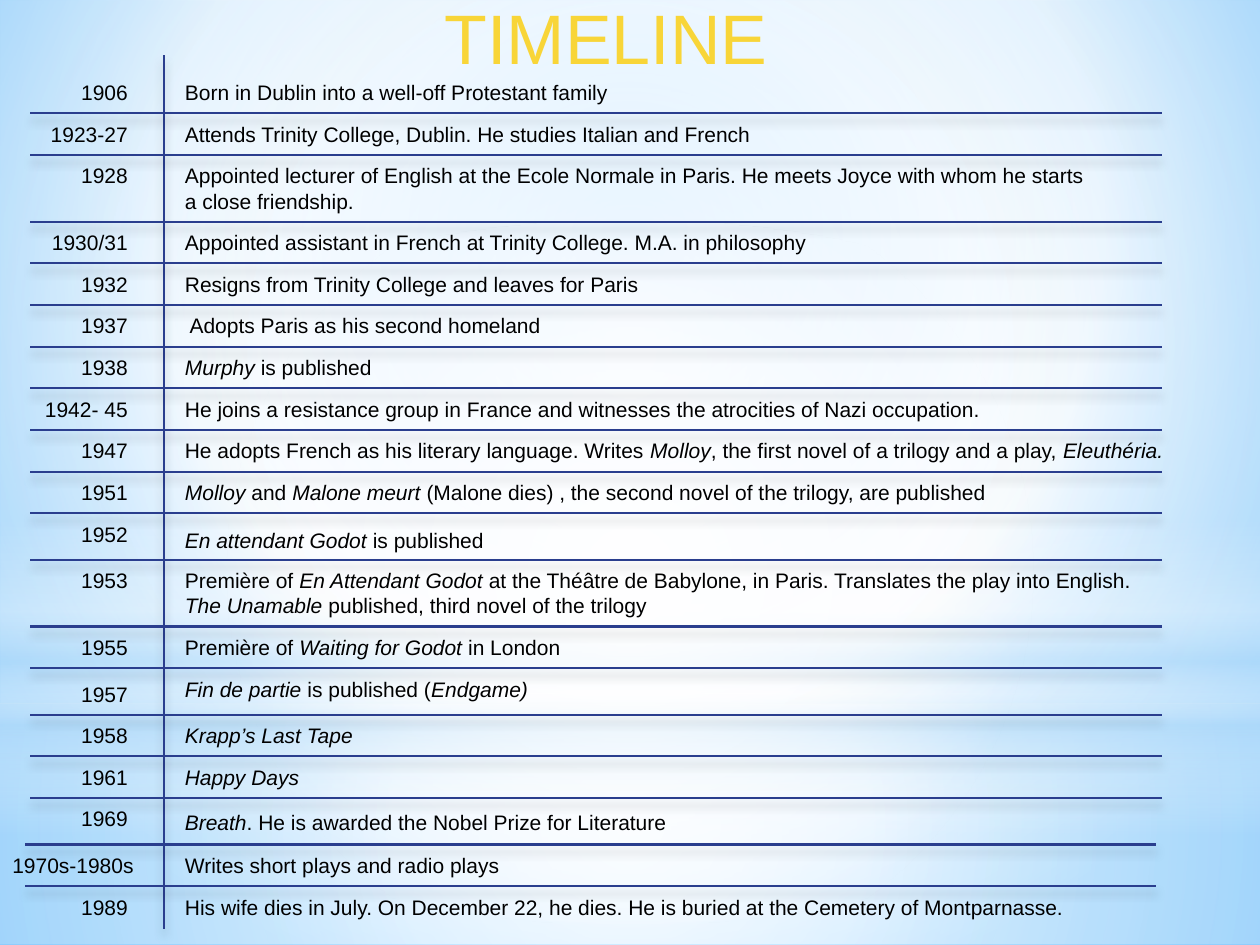
"""Build a one-slide timeline of a writer's life on a soft blue background."""
from lxml import etree
from pptx import Presentation
from pptx import util as u
from pptx.dml.color import RGBColor
from pptx.enum import shapes, text
from pptx.oxml import parse_xml
from pptx.oxml.ns import nsdecls, qn

Pt = u.Pt
COLORS = {"title": "F8D538", "text": "000000", "rule": "2A3E8E", "white": "FFFFFF",
          "pale": "B4DCFA", "sky": "9ED5FF", "deep": "5BB9FF"}
CENTRE = (50, 50, 50, 50)


def set_gradient(holder, stops, focus=None):
    """Replace the solid fill with a gradient, radial when a focus is given."""
    stop_xml = "".join(
        f'<a:gs pos="{position * 1000}"><a:srgbClr val="{COLORS[color]}">'
        f'<a:alpha val="{opacity * 1000}"/></a:srgbClr></a:gs>'
        for position, color, opacity in stops)
    shade = '<a:lin ang="5400000" scaled="0"/>'
    if focus:
        left, top, right, bottom = (side * 1000 for side in focus)
        shade = (f'<a:path path="circle"><a:fillToRect l="{left}" t="{top}" '
                 f'r="{right}" b="{bottom}"/></a:path>')
    solid = holder.find(".//" + qn("a:solidFill"))
    solid.getparent().replace(solid, parse_xml(
        f'<a:gradFill {nsdecls("a")} rotWithShape="1"><a:gsLst>{stop_xml}</a:gsLst>'
        f'{shade}</a:gradFill>'))


def add_rule(group, x1, y1, x2, y2):
    """Draw a thin line with a soft shadow below it."""
    line = group.shapes.add_connector(
        shapes.MSO_CONNECTOR.STRAIGHT, Pt(x1), Pt(y1), Pt(x2), Pt(y2))
    line.line.color.rgb = RGBColor.from_string(COLORS["rule"])
    line.line.width = Pt(1.25)
    effects = etree.SubElement(line.element.spPr, qn("a:effectLst"))
    shadow = etree.SubElement(effects, qn("a:outerShdw"), blurRad=str(Pt(5)),
                              dist=str(Pt(4)), dir="5400000", rotWithShape="0")
    color = etree.SubElement(shadow, qn("a:srgbClr"), val=COLORS["text"])
    etree.SubElement(color, qn("a:alpha"), val="20000")


presentation = Presentation()
presentation.slide_width, presentation.slide_height = Pt(720), Pt(540)
slide = presentation.slides.add_slide(presentation.slide_layouts[5])
slide.background.fill.solid()
set_gradient(slide.element, [(0, "sky", 100), (60, "white", 100), (100, "deep", 100)],
             (20, 10, 20, 60))

title = slide.shapes.title
title.left, title.top, title.width, title.height = Pt(9), Pt(-10.8), Pt(671), Pt(42.5)
frame = title.text_frame
frame.text = "TIMELINE"
frame.auto_size = text.MSO_AUTO_SIZE.NONE
frame.vertical_anchor = text.MSO_ANCHOR.TOP
frame.margin_left, frame.margin_top = Pt(3.6), Pt(7.8)
frame.margin_right = frame.margin_bottom = 0
paragraph = frame.paragraphs[0]
paragraph.alignment = text.PP_ALIGN.CENTER
paragraph.font.size, paragraph.font.name = Pt(40), "Arial"
paragraph.font.color.rgb = RGBColor.from_string(COLORS["title"])

RECTANGLE, OVAL = shapes.MSO_SHAPE.RECTANGLE, shapes.MSO_SHAPE.OVAL
panels = [
    (RECTANGLE, 402, 138, [(0, "white", 91), (37, "white", 76), (100, "pale", 79)], CENTRE),
    (RECTANGLE, 0, 402, [(0, "white", 89), (48, "white", 62), (100, "pale", 79)], CENTRE),
    (RECTANGLE, 297, 180, [(0, "white", 0), (29, "white", 30), (45, "pale", 40),
                           (55, "white", 26), (65, "pale", 60), (100, "white", 0)], None),
    (OVAL, 126, 402, [(0, "white", 100), (56, "white", 0)], CENTRE),
]
for kind, top, height, stops, focus in panels:
    panel = slide.shapes.add_shape(kind, 0, Pt(top), Pt(720), Pt(height))
    panel.shadow.inherit = False
    panel.line.fill.background()
    panel.fill.solid()
    set_gradient(panel.element.spPr, stops, focus)
    title.element.addprevious(panel.element)

SINGLE, LOOSE, DOUBLE = 23.8, 26.6, 38.1
# Each event: year, text with *italics*, text width, row height, year and text drop
events = [
    ("1906", "Born in Dublin into a well-off Protestant family", 414, SINGLE, 0, 0),
    ("1923-27", "Attends Trinity College, Dublin. He studies Italian and French",
     393, SINGLE, 0, 0),
    ("1928", "Appointed lecturer of English at the Ecole Normale in Paris. "
     "He meets Joyce with whom he starts\va close friendship.", 595, DOUBLE, 0, 0),
    ("1930/31", "Appointed assistant in French at Trinity College. M.A. in philosophy",
     566, SINGLE, 0, 0),
    ("1932", "Resigns from Trinity College and leaves for Paris", 381, SINGLE, 0, 0),
    ("1937", " Adopts Paris as his second homeland", 223, SINGLE, 0, 0),
    ("1938", "*Murphy* is published", 123, SINGLE, 0, 0),
    ("1942- 45", "He joins a resistance group in France and witnesses the atrocities "
     "of Nazi occupation.", 566, SINGLE, 0, 0),
    ("1947", "He adopts French as his literary language. Writes *Molloy*, the first novel "
     "of a trilogy and a play, *Eleuthéria.*", 595, SINGLE, 0, 0),
    ("1951", "*Molloy* and *Malone meurt* (Malone dies) , the second novel of the trilogy, "
     "are published", 566, SINGLE, 0, 0),
    ("1952", "*En attendant Godot* is published", 224, LOOSE, 0, 3.6),
    ("1953", "Première of *En Attendant Godot* at the Théâtre de Babylone, in Paris. "
     "Translates the play into English.\v*The Unamable* published, third novel "
     "of the trilogy", 577, DOUBLE, 0, 0),
    ("1955", "Première of *Waiting for Godot* in London", 234, SINGLE, 0, 0),
    ("1957", "*Fin de partie* is published (*Endgame)*", 217, LOOSE, 3, 0),
    ("1958", "*Krapp’s Last Tape*", 114, SINGLE, 0, 0),
    ("1961", "*Happy Days*", 81, SINGLE, 0, 0),
    ("1969", "*Breath*. He is awarded the Nobel Prize for Literature", 293, LOOSE, 0, 2.2),
    ("1970s-1980s", "Writes short plays and radio plays", 197, SINGLE, 0, 0),
    ("1989", "His wife dies in July. On December 22, he dies. He is buried at the "
     "Cemetery of Montparnasse.", 522, SINGLE, 0, 0),
]

group = slide.shapes.add_group_shape()
add_rule(group, 93.6, 31.7, 93.6, 530.6)
row_top = 41
for index, (year, event, width, height, year_drop, event_drop) in enumerate(events):
    is_long = len(year) > 8
    year_left, year_inset = (-9.4, 7.2) if is_long else (3.6, 10.5)
    cells = [
        (year, year_left, 83.5 - year_left, SINGLE, year_drop, year_inset,
         text.PP_ALIGN.RIGHT),
        (event, 98.6, width, height, event_drop, 7.2, text.PP_ALIGN.LEFT),
    ]
    for words, left, box_width, row_height, drop, inset, alignment in cells:
        box_height = 36 if row_height == DOUBLE else 21.8
        box = group.shapes.add_textbox(
            Pt(left), Pt(row_top + 1 + drop), Pt(box_width), Pt(box_height))
        frame = box.text_frame
        frame.word_wrap = True
        frame.margin_right = Pt(inset)
        paragraph = frame.paragraphs[0]
        paragraph.alignment = alignment
        paragraph.font.size, paragraph.font.name = Pt(12), "Arial"
        paragraph.font.color.rgb = RGBColor.from_string(COLORS["text"])
        for part, piece in enumerate(words.split("*")):
            for line_number, line_text in enumerate(piece.split("\v")):
                if line_number:
                    paragraph.add_line_break()
                if line_text:
                    run = paragraph.add_run()
                    run.text = line_text
                    if part % 2:
                        run.font.italic = True
    row_top += height
    if index < len(events) - 1:
        rule_left = 14.3 if index >= len(events) - 3 else 17.3
        add_rule(group, rule_left, row_top, rule_left + 646.5, row_top)

presentation.save("out.pptx")
